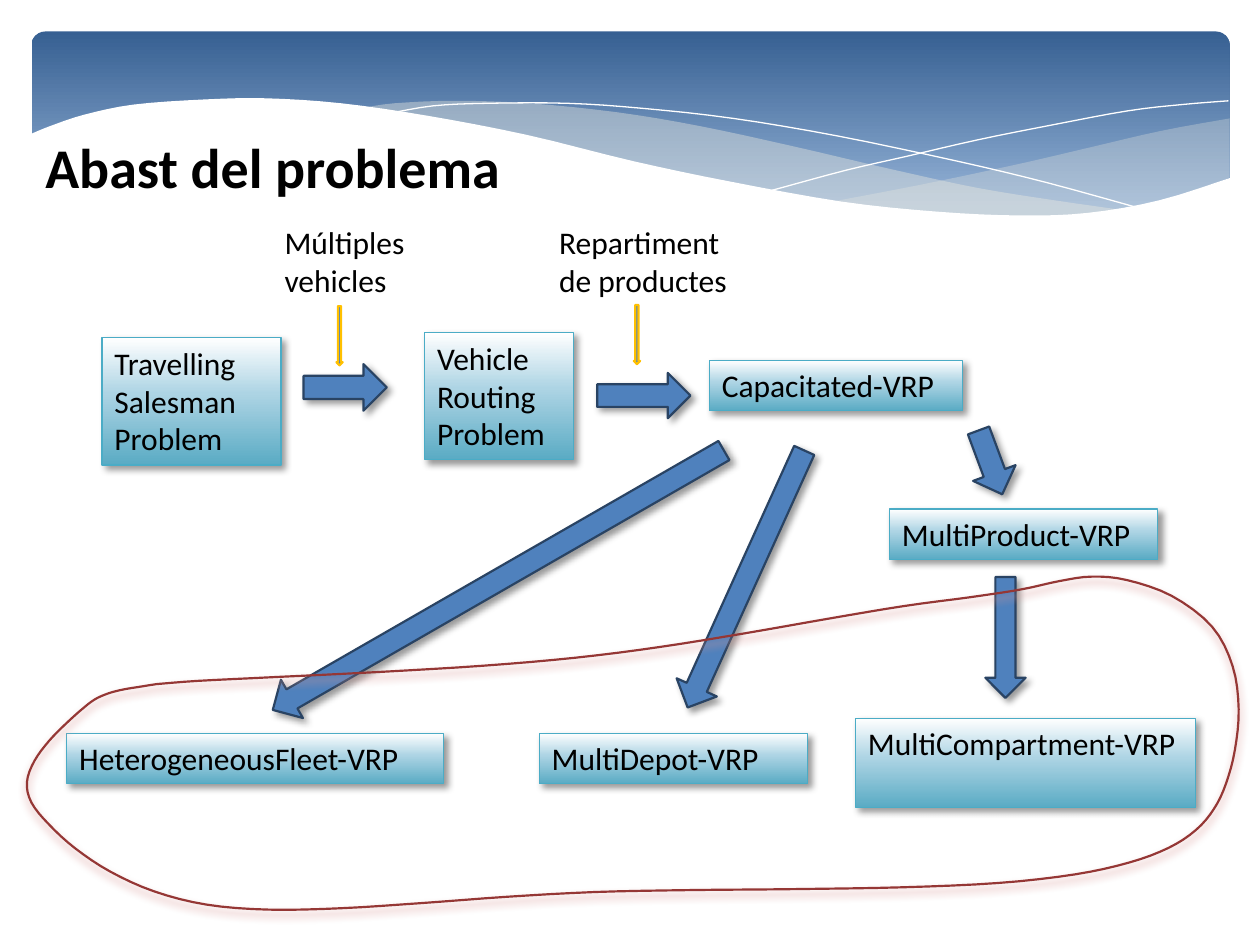
"""Build the slide that maps the scope of the vehicle routing problem."""
from copy import deepcopy

from lxml.etree import SubElement
from pptx import Presentation
from pptx.dml.color import RGBColor
from pptx.enum.shapes import MSO_SHAPE
from pptx.enum.text import MSO_ANCHOR, PP_ALIGN
from pptx.oxml.ns import qn
from pptx.util import Inches, Pt

BLACK = RGBColor(0x00, 0x00, 0x00)
WHITE = RGBColor(0xFF, 0xFF, 0xFF)
CREAM = RGBColor(0xEE, 0xEC, 0xE1)
BLUE = RGBColor(0x4F, 0x81, 0xBD)
NAVY = RGBColor(0x29, 0x43, 0x63)
GOLD = RGBColor(0xFF, 0xC0, 0x00)
TEAL = RGBColor(0x4B, 0xAC, 0xC6)
RED = RGBColor(0x95, 0x37, 0x35)
PINK = RGBColor(0xD9, 0x96, 0x94)
HEADER_STOPS = [(0, RGBColor(0x37, 0x60, 0x92)), (0.9, RGBColor(0x95, 0xB3, 0xD7))]
BOX_STOPS = [(0, WHITE), (0.44, RGBColor(0xAD, 0xD4, 0xE4)), (1, RGBColor(0x5A, 0xAB, 0xC4))]

deck = Presentation()
deck.slide_width, deck.slide_height = Inches(10), Inches(7.5)
page = deck.slides.add_slide(deck.slide_layouts[5])


def style(shape, text="", size=18, bold=False, fill=None, stops=None, alpha=None,
          line=None, width=1.25, shadow=None):
    """Format a shape and its text; shadow is colour, opacity, blur, distance, angle."""
    properties = shape._element.spPr
    if stops:
        shape.fill.gradient()
        shape.fill.gradient_angle = 270
        stop_list = properties.find(qn("a:gradFill")).find(qn("a:gsLst"))
        for _ in stops[2:]:
            stop_list.append(deepcopy(stop_list[-1]))
        for stop, (position, color) in zip(shape.fill.gradient_stops, stops):
            stop.position, stop.color.rgb = position, color
    elif fill is not None:
        shape.fill.solid()
        shape.fill.fore_color.rgb = fill
        if alpha:
            color = properties.find(qn("a:solidFill"))[0]
            SubElement(color, qn("a:alpha"), val=str(alpha * 1000))
    else:
        shape.fill.background()
    if line is not None:
        shape.line.color.rgb = line
        shape.line.width = Pt(width)
    else:
        shape.line.fill.background()
    shape.shadow.inherit = False
    if shadow:
        color, opacity, blur, distance, angle = shadow
        outer = SubElement(properties.find(qn("a:effectLst")), qn("a:outerShdw"),
                           blurRad=str(Pt(blur)), dist=str(Pt(distance)),
                           dir=str(angle * 60000), algn="ctr", rotWithShape="0")
        tint = SubElement(outer, qn("a:srgbClr"), val=str(color))
        SubElement(tint, qn("a:alpha"), val=str(opacity * 1000))
    if text:
        frame = shape.text_frame
        frame.word_wrap = True
        frame.vertical_anchor = MSO_ANCHOR.TOP
        para = frame.paragraphs[0]
        para.alignment = PP_ALIGN.LEFT
        span = para.add_run()
        span.text = text
        span.font.name, span.font.size, span.font.bold = "Calibri", Pt(size), bold
        span.font.color.rgb = BLACK


def add_outline(edges, closed=True):
    """Draw a freeform whose edges each run smoothly through their knots."""
    points = []
    for knots in edges:
        padded = [knots[0], *knots, knots[-1]]
        for a, b, c, d in zip(padded, padded[1:], padded[2:], padded[3:]):
            for t in (0, 0.25, 0.5, 0.75):
                points.append(tuple(
                    Inches(q + t / 2 * (r - p + t * (2 * p - 5 * q + 4 * r - s
                                                     + t * (3 * q - p - 3 * r + s))))
                    for p, q, r, s in zip(a, b, c, d)))
        points.append(tuple(Inches(value) for value in knots[-1]))
    builder = page.shapes.build_freeform(*points[0])
    builder.add_line_segments(points[1:], close=closed)
    return builder.convert_to_shape()


SOFT = (BLACK, 40, 4, 3, 45)

header = page.shapes.add_shape(MSO_SHAPE.ROUNDED_RECTANGLE, Inches(0.25), Inches(0.25),
                               Inches(9.51), Inches(1.56))
header.adjustments[0] = 0.07
style(header, stops=HEADER_STOPS)

right_wave = add_outline([
    [(9.76, 0.94), (9.21, 1.04), (8.61, 1.18), (8.05, 1.31), (7.29, 1.47), (6.61, 1.6)],
    [(6.61, 1.6), (7.19, 1.67), (7.69, 1.71), (8.14, 1.72), (8.63, 1.7), (9.05, 1.63),
     (9.42, 1.54), (9.76, 1.41)],
])
style(right_wave, fill=CREAM, alpha=29)

middle_wave = add_outline([
    [(8.93, 1.67), (8.37, 1.59), (7.75, 1.49), (7.06, 1.34), (6.29, 1.16), (5.55, 1),
     (4.89, 0.89), (4.2, 0.82), (3.61, 0.8), (3.13, 0.82), (2.86, 0.86)],
    [(2.86, 0.86), (3.42, 0.94), (4.04, 1.06), (4.91, 1.26), (5.66, 1.43), (6.34, 1.56),
     (6.95, 1.65), (7.48, 1.7), (7.96, 1.73), (8.48, 1.72), (8.93, 1.67)],
])
style(middle_wave, fill=CREAM, alpha=40)

falling_line = [(3.09, 0.9), (3.44, 0.84), (3.87, 0.82), (4.5, 0.82), (5.1, 0.86),
                (5.82, 0.94), (6.65, 1.08), (7.6, 1.28), (8.31, 1.45), (9.07, 1.66)]
rising_line = [(6.13, 1.51), (6.72, 1.35), (7.2, 1.24), (7.76, 1.11), (8.36, 0.99),
               (8.95, 0.88), (9.38, 0.83), (9.75, 0.8)]
for knots in (falling_line, rising_line):
    style(add_outline([knots], closed=False), line=WHITE, width=0)

white_wave = add_outline([
    [(9.77, 1.41), (9.2, 1.59), (8.63, 1.69), (8.09, 1.71), (7.44, 1.68), (6.68, 1.6),
     (5.79, 1.44), (5.03, 1.28), (4.18, 1.07), (3.4, 0.92), (2.71, 0.82), (2.11, 0.78),
     (1.61, 0.79), (1.06, 0.83), (0.67, 0.91), (0.4, 1), (0.23, 1.07)],
    [(0.23, 2.24), (9.77, 2.24)],
])
style(white_wave, fill=WHITE)

for text, left, top, width, height in [
    ("Travelling Salesman Problem", 0.81, 2.68, 1.42, 1.01),
    ("Vehicle Routing Problem", 3.37, 2.64, 1.18, 1.01),
    ("Capacitated-VRP", 5.63, 2.86, 2.01, 0.4),
    ("MultiProduct-VRP", 7.06, 4.04, 2.13, 0.4),
    ("MultiDepot-VRP", 4.28, 5.82, 2.13, 0.4),
    ("MultiCompartment-VRP", 6.79, 5.7, 2.7, 0.71),
    ("HeterogeneousFleet-VRP", 0.53, 5.82, 2.99, 0.4),
]:
    box = page.shapes.add_shape(MSO_SHAPE.RECTANGLE, Inches(left), Inches(top),
                                Inches(width), Inches(height))
    style(box, text, stops=BOX_STOPS, line=TEAL, width=0.75, shadow=SOFT)

for text, left, width in [("Múltiples vehicles", 2.16, 1.21),
                          ("Repartiment de productes", 4.34, 1.67)]:
    label = page.shapes.add_textbox(Inches(left), Inches(1.72), Inches(width), Inches(0.71))
    style(label, text)

for kind, left, top, width, height, angle, line, shadow in [
    (MSO_SHAPE.RIGHT_ARROW, 2.41, 2.89, 0.66, 0.37, 0, NAVY, SOFT),
    (MSO_SHAPE.RIGHT_ARROW, 4.74, 2.96, 0.74, 0.36, 0, NAVY, SOFT),
    (MSO_SHAPE.DOWN_ARROW, 2.67, 2.43, 0.05, 0.47, 0, GOLD, None),
    (MSO_SHAPE.DOWN_ARROW, 5.03, 2.42, 0.05, 0.47, 0, GOLD, None),
    (MSO_SHAPE.RIGHT_ARROW, 7.59, 3.49, 0.54, 0.36, 69.6, NAVY, SOFT),
    (MSO_SHAPE.RIGHT_ARROW, 4.8, 4.42, 2.24, 0.35, 114.4, NAVY, SOFT),
    (MSO_SHAPE.DOWN_ARROW, 7.82, 4.58, 0.32, 0.96, 0, NAVY, SOFT),
    (MSO_SHAPE.RIGHT_ARROW, 1.89, 4.43, 4.13, 0.35, 150.1, NAVY, SOFT),
]:
    arrow = page.shapes.add_shape(kind, Inches(left), Inches(top), Inches(width), Inches(height))
    arrow.rotation = angle
    style(arrow, fill=BLUE, line=line, shadow=shadow)

loop_controls = [
    (1.24, 5.43), (1.46, 5.39), (3.49, 5.34), (4.57, 5.22), (5.65, 5.11), (6.91, 4.82),
    (7.7, 4.74), (8.49, 4.66), (8.61, 4.42), (9.3, 4.73), (9.98, 5.05), (9.86, 5.85),
    (9.73, 6.22), (9.6, 6.58), (9.36, 6.8), (8.53, 6.94), (7.69, 7.09), (5.87, 7.04),
    (4.72, 7.08), (3.57, 7.12), (2.38, 7.3), (1.64, 7.18), (0.89, 7.06), (0.42, 6.63),
    (0.25, 6.37), (0.09, 6.11), (0.48, 5.78), (0.65, 5.63), (0.81, 5.47), (1.02, 5.47),
    (1.24, 5.43),
]
loop_knots = [
    tuple((1 - t) ** 3 * p + 3 * (1 - t) ** 2 * t * q + 3 * (1 - t) * t ** 2 * r + t ** 3 * s
          for p, q, r, s in zip(*loop_controls[start:start + 4]))
    for start in range(0, len(loop_controls) - 1, 3)
    for t in (0, 0.2, 0.4, 0.6, 0.8)
]
loop = add_outline([loop_knots + loop_controls[-1:]])
style(loop, line=RED, shadow=(PINK, 100, 5, 3, 90))

title = page.shapes.title
title.left, title.top, title.width, title.height = (
    Inches(0.26), Inches(1), Inches(4.36), Inches(0.64))
style(title, "Abast del problema", size=32, bold=True)
page.shapes._spTree.append(title._element)

deck.save("out.pptx")
